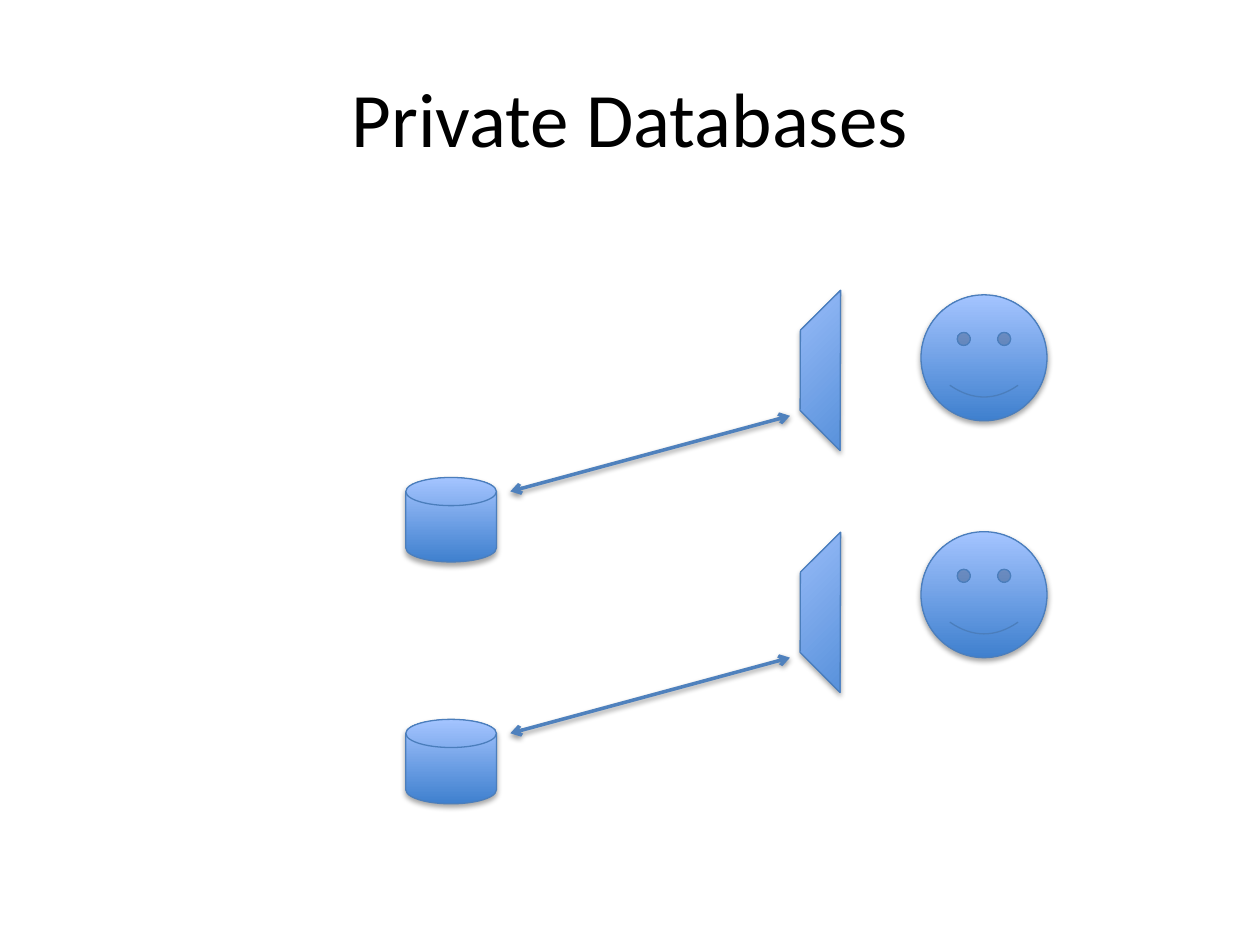
from lxml import etree
from pptx import Presentation
from pptx.dml.color import RGBColor
from pptx.enum.shapes import MSO_CONNECTOR, MSO_SHAPE
from pptx.enum.text import MSO_ANCHOR, PP_ALIGN
from pptx.oxml.ns import qn
from pptx.util import Inches, Pt

DISK = MSO_SHAPE.FLOWCHART_MAGNETIC_DISK
STRIPE = MSO_SHAPE.DIAGONAL_STRIPE
SMILEY = MSO_SHAPE.SMILEY_FACE
STRAIGHT = MSO_CONNECTOR.STRAIGHT
MIDDLE = MSO_ANCHOR.MIDDLE
CENTER = PP_ALIGN.CENTER

BLACK = RGBColor(0x00, 0x00, 0x00)
DEEP_BLUE = RGBColor(0x3F, 0x80, 0xCE)
PALE_BLUE = RGBColor(0xA4, 0xC4, 0xFF)
OUTLINE_BLUE = RGBColor(0x4B, 0x7E, 0xBC)
ARROW_BLUE = RGBColor(0x4F, 0x81, 0xBD)

COLUMNS, ROWS = 10, 7.5
BLANK_LAYOUT = 6


def write_text(frame, text, *, size, color, font="Calibri", align=CENTER):
    paragraph = frame.paragraphs[0]
    paragraph.alignment = align
    run = paragraph.add_run()
    run.text = text
    run.font.name = font
    run.font.size = Pt(size)
    run.font.color.rgb = color


def add_shadow(properties, effects, *, alpha, distance):
    shadow = etree.SubElement(
        effects, qn("a:outerShdw"), blurRad=str(Pt(3.1)),
        dist=str(Pt(distance)), dir="5400000", rotWithShape="0")
    tint = etree.SubElement(shadow, qn("a:srgbClr"), val=str(BLACK))
    etree.SubElement(tint, qn("a:alpha"), val=str(alpha * 1000))


class DiagramSlide:
    def __init__(self, presentation):
        self.slide = presentation.slides.add_slide(
            presentation.slide_layouts[BLANK_LAYOUT])
        self.column = presentation.slide_width / COLUMNS
        self.row = presentation.slide_height / ROWS

    def place(self, x, y):
        return round(x * self.column), round(y * self.row)

    def title(self, text, x, y, width, height):
        box = self.slide.shapes.add_textbox(
            *self.place(x, y), *self.place(width, height))
        box.text_frame.word_wrap = True
        box.text_frame.vertical_anchor = MIDDLE
        write_text(box.text_frame, text, size=44, color=BLACK)

    def symbol(self, kind, x, y, width, height, rotation=0, adjustment=None):
        symbol = self.slide.shapes.add_shape(
            kind, *self.place(x, y), *self.place(width, height))
        symbol.rotation = rotation
        if adjustment is not None:
            symbol.adjustments[0] = adjustment
        symbol.fill.gradient()
        symbol.fill.gradient_angle = 90
        for stop, color in zip(symbol.fill.gradient_stops,
                               (DEEP_BLUE, PALE_BLUE)):
            stop.color.rgb = color
        symbol.line.color.rgb = OUTLINE_BLUE
        symbol.line.width = Pt(0.75)
        symbol.shadow.inherit = False
        properties = symbol._element.spPr
        add_shadow(properties, properties.find(qn("a:effectLst")),
                   alpha=35, distance=1.8)

    def two_way_arrow(self, start, end):
        arrow = self.slide.shapes.add_connector(
            STRAIGHT, *self.place(*start), *self.place(*end))
        arrow.line.color.rgb = ARROW_BLUE
        arrow.line.width = Pt(2)
        properties = arrow._element.spPr
        for tip in ("a:headEnd", "a:tailEnd"):
            etree.SubElement(properties.find(qn("a:ln")), qn(tip), type="arrow")
        effects = etree.SubElement(properties, qn("a:effectLst"))
        add_shadow(properties, effects, alpha=38, distance=1.6)


def main():
    presentation = Presentation()
    presentation.slide_width = Inches(10)
    presentation.slide_height = Inches(7.5)
    diagram = DiagramSlide(presentation)
    diagram.title("Private Databases", 0.5, 0.3, 9, 1.25)
    for drop in (0, 1.92):
        diagram.symbol(DISK, 3.22, 3.79 + drop, 0.72, 0.67)
        diagram.symbol(STRIPE, 6.22, 2.49 + drop, 0.9, 0.9, rotation=315.2)
        diagram.two_way_arrow((4.05, 3.9 + drop), (6.27, 3.3 + drop))
    for user_top in (2.34, 4.22):
        diagram.symbol(SMILEY, 7.31, user_top, 1, 1, adjustment=0.047)
    presentation.save("out.pptx")


if __name__ == "__main__":
    main()
